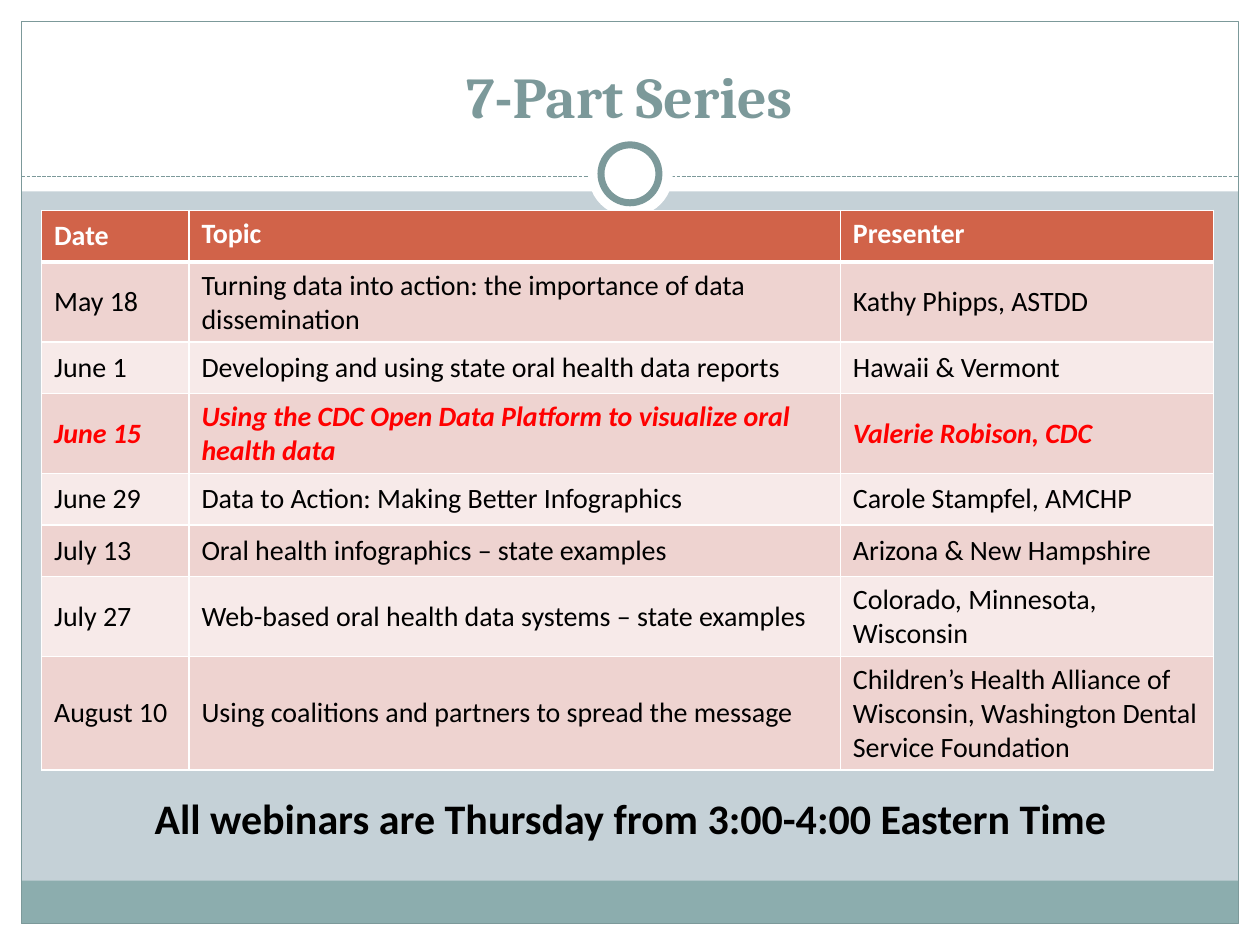
from lxml import etree
from pptx import Presentation
from pptx.dml.color import RGBColor
from pptx.enum import dml, shapes, text
from pptx.oxml.ns import qn
from pptx.util import Inches, Pt


def paint(color, hue):
    if hasattr(color, "solid"):
        color.solid()
        color = color.fore_color
    color.rgb = RGBColor.from_string(hue)


def style(frame, face, size, hue, bold=True, slant=False):
    for run in frame.paragraphs[0].runs:
        run.font.name = face
        run.font.size = Pt(size)
        run.font.bold = bold
        run.font.italic = slant
        paint(run.font.color, hue)


white, teal = "FFFFFF", "7C999A"
deck = Presentation()
deck.slide_width, deck.slide_height = Inches(10), Inches(7.5)
slide = deck.slides.add_slide(deck.slide_layouts[6])
paint(slide.background.fill, "C5D1D7")
tree = slide.shapes
rect, oval = shapes.MSO_SHAPE.RECTANGLE, shapes.MSO_SHAPE.OVAL

parts = [
    (rect, (0, 7.33, 10, 0.17), white, 0),
    (rect, (0, 0, 10, 1.52), white, 0),
    (rect, (0, 0, 0.17, 7.5), white, 0),
    (rect, (9.83, 0, 0.17, 7.5), white, 0),
    (rect, (0.17, 6.99, 9.66, 0.34), "8CADAE", 0),
    (rect, (0.17, 0.17, 9.66, 7.16), None, 0.75),
    (None, (0.17, 1.4, 9.83, 1.4), None, 0.75),
    (oval, (4.67, 1.05, 0.67, 0.67), white, 0),
    (oval, (4.77, 1.15, 0.46, 0.46), white, 4),
]
for kind, box, fill, width in parts:
    box = [Inches(n) for n in box]
    if kind is None:
        part = tree.add_connector(shapes.MSO_CONNECTOR.STRAIGHT, *box)
        part.line.dash_style = dml.MSO_LINE.SQUARE_DOT
        etree.SubElement(part._element.spPr, qn("a:effectLst"))
    else:
        part = tree.add_shape(kind, *box)
        part.shadow.inherit = False
        if fill:
            paint(part.fill, fill)
        else:
            part.fill.background()
    if width:
        paint(part.line.fill, teal)
        part.line.width = Pt(width)
    else:
        part.line.fill.background()

labels = [
    ("7-Part Series", (0.33, 0.25, 9.33, 0.83), "Cambria", 33, teal, True),
    ("All webinars are Thursday from 3:00-4:00 Eastern Time",
     (1.09, 6.24, 7.83, 0.5), "Calibri", 24, "000000", False),
]
for words, box, face, size, hue, wrap in labels:
    frame = tree.add_textbox(*[Inches(n) for n in box]).text_frame
    frame.text = words
    frame.word_wrap = wrap
    if wrap:
        frame.vertical_anchor = text.MSO_ANCHOR.BOTTOM
    frame.paragraphs[0].alignment = text.PP_ALIGN.CENTER
    style(frame, face, size, hue)

rows = [
    ("Date", "Topic", "Presenter"),
    ("May 18", "Turning data into action: the importance of data dissemination",
     "Kathy Phipps, ASTDD"),
    ("June 1", "Developing and using state oral health data reports",
     "Hawaii & Vermont"),
    ("June 15", "Using the CDC Open Data Platform to visualize oral health data",
     "Valerie Robison, CDC"),
    ("June 29", "Data to Action: Making Better Infographics",
     "Carole Stampfel, AMCHP"),
    ("July 13", "Oral health infographics – state examples",
     "Arizona & New Hampshire"),
    ("July 27", "Web-based oral health data systems – state examples",
     "Colorado, Minnesota, Wisconsin"),
    ("August 10", "Using coalitions and partners to spread the message",
     "Children’s Health Alliance of Wisconsin, Washington Dental Service Foundation"),
]
high = Inches(0.41)
table = tree.add_table(len(rows), 3, Inches(0.33), Inches(1.67),
                       Inches(9.3), high * len(rows)).table
for col, width in zip(table.columns, (1.17, 5.17, 2.96)):
    col.width = Inches(width)
for r, row in enumerate(rows):
    table.rows[r].height = high
    head, hot = r == 0, r == 3
    fill = "D16349" if head else ("F7EAE9", "EED3D0")[r % 2]
    hue = white if head else "FF0000" if hot else "000000"
    for c, words in enumerate(row):
        cell = table.cell(r, c)
        cell.text = words
        if not head or c == 0:
            cell.vertical_anchor = text.MSO_ANCHOR.MIDDLE
        style(cell.text_frame, "Calibri", 16, hue, head or hot, hot)
        props = cell._tc.get_or_add_tcPr()
        for side in "LRTB":
            thick = 3 if (r, side) in ((0, "B"), (1, "T")) else 1
            edge = etree.SubElement(props, qn(f"a:ln{side}"), w=str(Pt(thick)))
            solid = etree.SubElement(edge, qn("a:solidFill"))
            etree.SubElement(solid, qn("a:srgbClr"), val=white)
        paint(cell.fill, fill)

deck.save("out.pptx")
